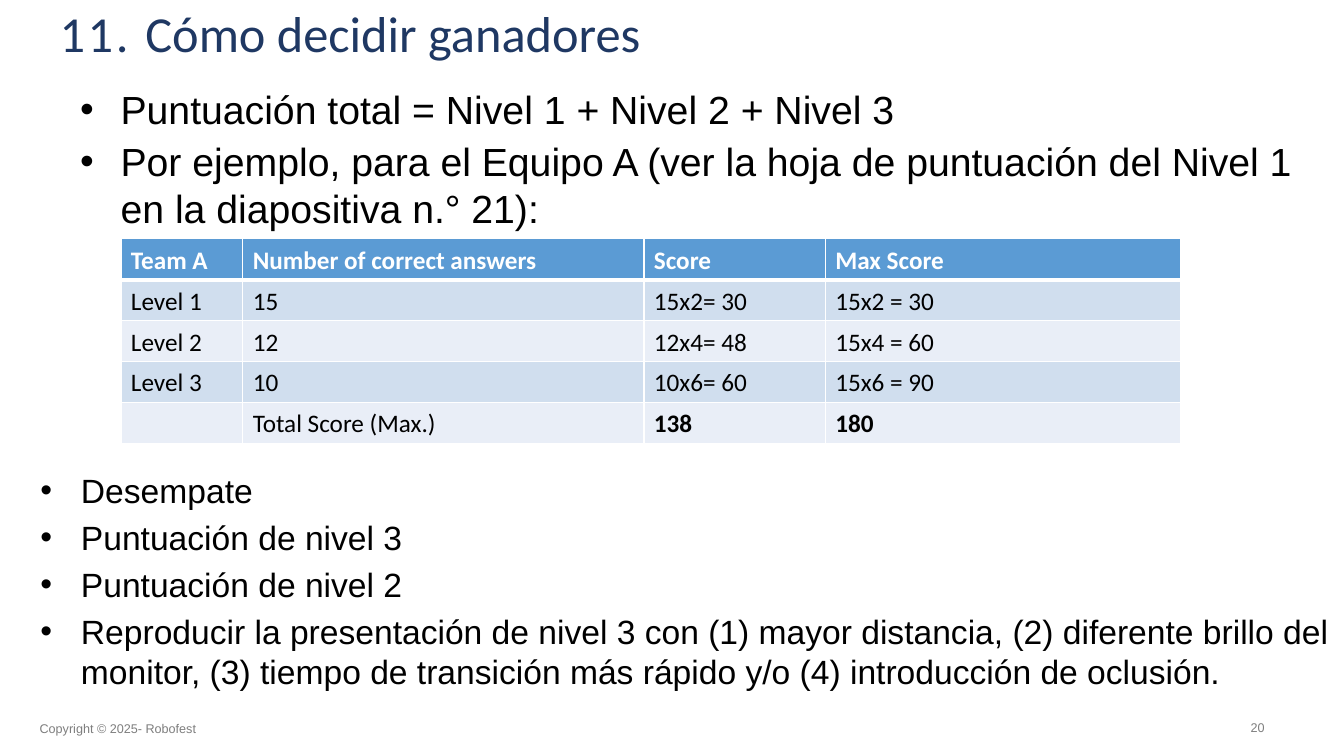
from lxml import etree
from pptx import Presentation
from pptx.dml.color import RGBColor
from pptx.enum import text
from pptx.oxml.ns import qn
from pptx.util import Cm, Pt

HEAD = ["Team A", "Number of correct answers", "Score", "Max Score"]
ROWS = [
    HEAD,
    ["Level 1", "15", "15x2= 30", "15x2 = 30"],
    ["Level 2", "12", "12x4= 48", "15x4 = 60"],
    ["Level 3", "10", "10x6= 60", "15x6 = 90"],
    ["", "Total Score (Max.)", "138", "180"],
]
WIDTHS = [3.07, 10.11, 4.57, 8.94]
RULES = [
    "Puntuación total = Nivel 1 + Nivel 2 + Nivel 3",
    "Por ejemplo, para el Equipo A (ver la hoja de puntuación del Nivel 1 "
    "en la diapositiva n.° 21):",
]
TIES = [
    "Desempate",
    "Puntuación de nivel 3",
    "Puntuación de nivel 2",
    "Reproducir la presentación de nivel 3 con (1) mayor distancia, "
    "(2) diferente brillo del monitor, (3) tiempo de transición más rápido "
    "y/o (4) introducción de oclusión.",
]


def color(code):
    """Turn a hex string into a colour."""
    return RGBColor.from_string(code)


def write(para, words, size, face, ink, bold=False, space=0):
    """Add one formatted run to a paragraph."""
    run = para.add_run()
    run.text = words
    font = run.font
    font.size, font.name, font.bold = Pt(size), face, bold
    font.color.rgb = color(ink)
    if space:
        run._r.get_or_add_rPr().set("spc", str(space))


def place(shape, box, top):
    """Move a text shape to its box and set its frame."""
    shape.left, shape.top, shape.width, shape.height = map(Cm, box)
    frame = shape.text_frame
    frame.word_wrap = True
    frame.auto_size = text.MSO_AUTO_SIZE.NONE
    frame.vertical_anchor = text.MSO_ANCHOR.TOP
    frame.margin_left = frame.margin_right = frame.margin_bottom = 0
    frame.margin_top = Cm(top)
    return frame


def title(shape, box):
    """Fill the heading of the slide."""
    para = place(shape, box, 0.06).paragraphs[0]
    para.alignment = text.PP_ALIGN.LEFT
    write(para, "11. ", 36, "Calibri", "1F3863", space=190)
    write(para, "Cómo decidir ganadores", 36, "Calibri", "1F3863")


def bullets(shape, box, items, size, gap, top):
    """Fill a body placeholder with a bulleted list."""
    frame = place(shape, box, top)
    for num, item in enumerate(items):
        para = frame.add_paragraph() if num else frame.paragraphs[0]
        para.space_before = Pt(gap if num else 0)
        props = para._p.get_or_add_pPr()
        props.set("marL", str(Cm(1.04)))
        props.set("indent", str(Cm(-1.02)))
        etree.SubElement(props, qn("a:buFont")).set("typeface", "Arial")
        etree.SubElement(props, qn("a:buChar")).set("char", "•")
        write(para, item, size, "Arial", "000000")


def border(cell, side, width):
    """Draw one white edge of a cell."""
    line = etree.SubElement(cell._tc.get_or_add_tcPr(), qn("a:ln" + side))
    line.set("w", str(Pt(width)))
    fill = etree.SubElement(line, qn("a:solidFill"))
    etree.SubElement(fill, qn("a:srgbClr")).set("val", "FFFFFF")


def scores(slide, box):
    """Build the table of scores."""
    frame = slide.shapes.add_table(len(ROWS), len(HEAD), *map(Cm, box))
    table = frame.table
    for col, width in zip(table.columns, WIDTHS):
        col.width = Cm(width)
    for y, row in enumerate(ROWS):
        table.rows[y].height = Cm(box[3] / len(ROWS))
        for x, words in enumerate(row):
            cell = table.cell(y, x)
            cell.margin_left, cell.margin_top = Cm(0.25), Cm(0.16)
            cell.margin_right = cell.margin_bottom = 0
            for side in "LRTB":
                thick = (y, side) in ((0, "B"), (1, "T"))
                border(cell, side, 3 if thick else 1)
            cell.fill.solid()
            shade = "D0DEEE" if y % 2 else "E9EEF7"
            cell.fill.fore_color.rgb = color(shade if y else "5B9BD4")
            if words:
                bold = y == 0 or (y == len(ROWS) - 1 and x > 1)
                ink = "000000" if y else "FFFFFF"
                para = cell.text_frame.paragraphs[0]
                write(para, words, 18, "Calibri", ink, bold)


def footer(slide, box, parts):
    """Add a small grey line at the foot of the slide."""
    frame = place(slide.shapes.add_textbox(*map(Cm, box)), box, 0.06)
    frame.word_wrap = False
    for part in parts:
        write(frame.paragraphs[0], part, 9, "Arial", "7E7E7E")


def main():
    """Build and save the slide."""
    deck = Presentation()
    deck.slide_width, deck.slide_height = Cm(33.87), Cm(19.05)
    slide = deck.slides.add_slide(deck.slide_layouts[3])
    head, upper, lower = slide.placeholders
    title(head, (1.5, 0, 15, 1.6))
    bullets(upper, (2, 1.9, 31.88, 3.86), RULES, 28, 3.6, 0.25)
    scores(slide, (3.05, 6.02, sum(WIDTHS), 5.15))
    bullets(lower, (1, 11.48, 33.53, 5.84), TIES, 24, 4.8, 0.35)
    footer(slide, (1, 18.11, 4.11, 0.46), ["Copyright © 2025- ", "Robofest"])
    footer(slide, (31.52, 18.08, 0.43, 0.46), ["20"])
    deck.save("out.pptx")


if __name__ == "__main__":
    main()
